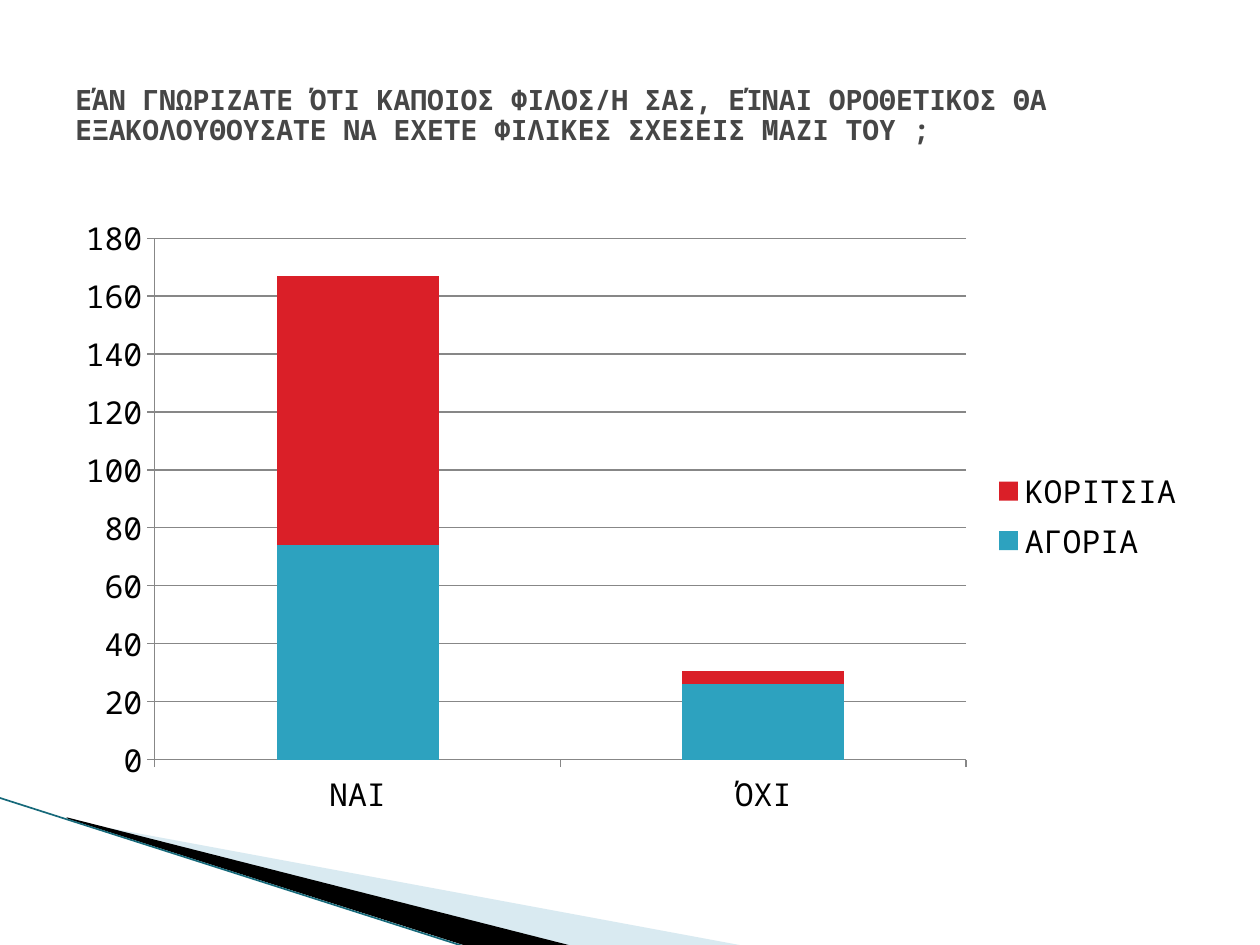
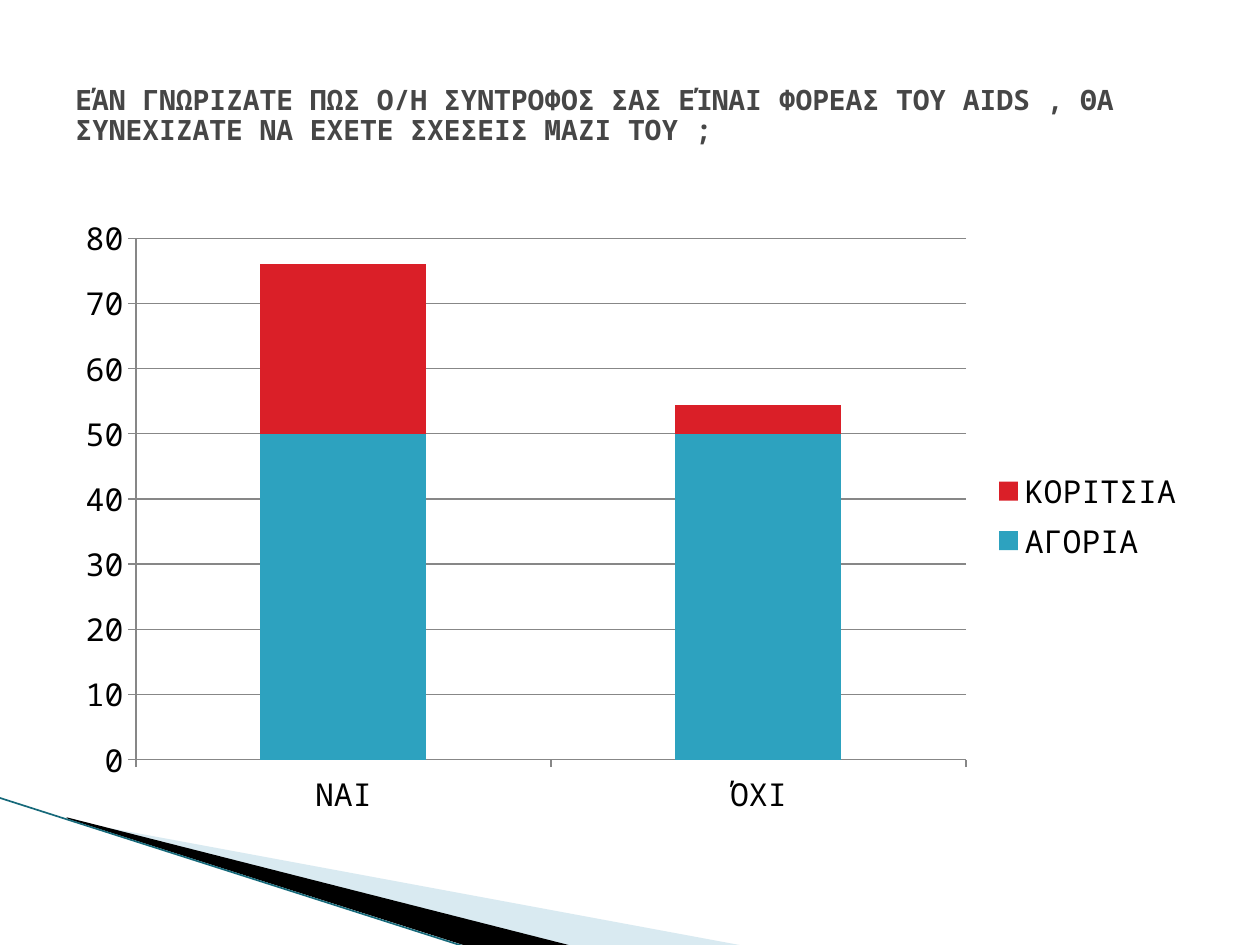
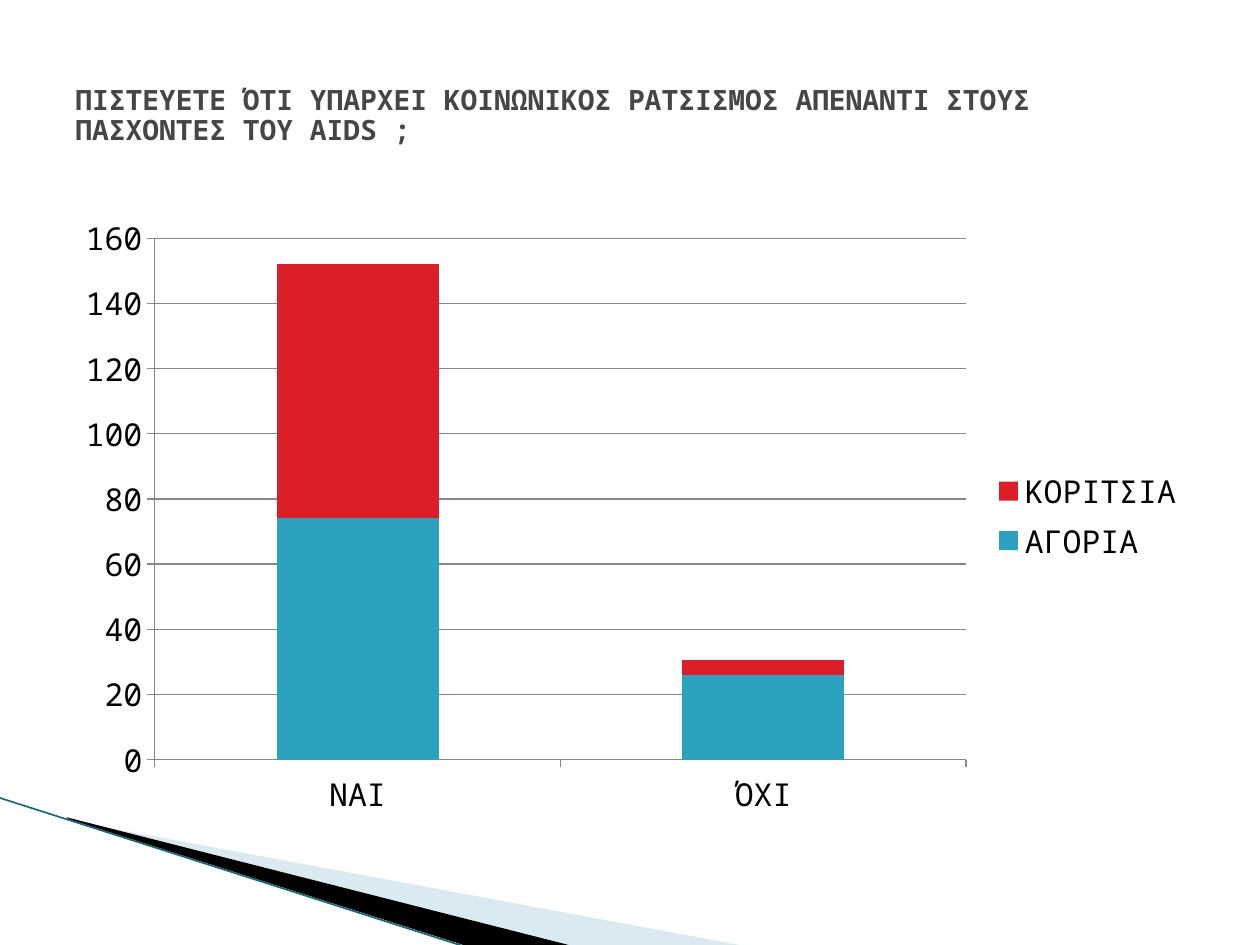
"""Builds three survey slides, each with a question and a stacked column chart."""
import pptx
import pptx.util
import pptx.chart.data
import pptx.dml.color
import pptx.enum.chart
import pptx.enum.shapes
import pptx.enum.text
import pptx.oxml.ns
import pptx.oxml.xmlchemy
from pptx.util import Pt

FONT = "Noto Sans Mono"
TITLE_FORMAT = {"name": FONT, "size": Pt(16), "bold": True}
CHART_FORMAT = {"name": FONT, "size": Pt(18), "bold": False}
TITLE_COLOR, TEXT_COLOR, GRID_COLOR = "464646", "000000", "878787"
SERIES_COLORS = ("2DA2BF", "DA1F28")
EDGE_COLOR = "16697A"

TITLE_BOX = (36, 21.6, 648, 90)
CHART_BOX = (36, 116.64, 648, 356.4)
CORNER_BOX = (0, 456, 428.4, 84.72)
WEDGES = (
    ("A0CBDC", 40, ((39.6, 12.72), (428.4, 84.72), (328.32, 84.72), (39.6, 12))),
    ("000000", 100, ((38.16, 11.28), (329.04, 84.72), (267.84, 85.44), (38.88, 12))),
)
EDGE = ((-0.72, -0.24), (267.12, 85.44))

CATEGORIES = ("ΝΑΙ", "ΌΧΙ")
QUESTIONS = (
    ("ΕΆΝ ΓΝΩΡΙΖΑΤΕ ΌΤΙ ΚΑΠΟΙΟΣ ΦΙΛΟΣ/Η ΣΑΣ, ΕΊΝΑΙ ΟΡΟΘΕΤΙΚΟΣ ΘΑ "
     "ΕΞΑΚΟΛΟΥΘΟΥΣΑΤΕ ΝΑ ΕΧΕΤΕ ΦΙΛΙΚΕΣ ΣΧΕΣΕΙΣ ΜΑΖΙ ΤΟΥ ;",
     {"ΑΓΟΡΙΑ": (74, 26), "ΚΟΡΙΤΣΙΑ": (93, 4.4)}),
    ("ΕΆΝ ΓΝΩΡΙΖΑΤΕ ΠΩΣ Ο/Η ΣΥΝΤΡΟΦΟΣ ΣΑΣ ΕΊΝΑΙ ΦΟΡΕΑΣ ΤΟΥ AIDS , ΘΑ "
     "ΣΥΝΕΧΙΖΑΤΕ ΝΑ ΕΧΕΤΕ ΣΧΕΣΕΙΣ ΜΑΖΙ ΤΟΥ ;",
     {"ΑΓΟΡΙΑ": (50, 50), "ΚΟΡΙΤΣΙΑ": (26, 4.4)}),
    ("ΠΙΣΤΕΥΕΤΕ ΌΤΙ ΥΠΑΡΧΕΙ ΚΟΙΝΩΝΙΚΟΣ ΡΑΤΣΙΣΜΟΣ ΑΠΕΝΑΝΤΙ ΣΤΟΥΣ "
     "ΠΑΣΧΟΝΤΕΣ ΤΟΥ AIDS ;",
     {"AΓΟΡΙΑ": (74, 26), "ΚΟΡΙΤΣΙΑ": (78, 4.4)}),
)


def rgb(value):
    """Return the colour for a hex string."""
    return pptx.dml.color.RGBColor.from_string(value)


def apply(target, values):
    """Set each attribute of the target from a dict."""
    for name, value in values.items():
        setattr(target, name, value)


def paint(fill, color, opacity=100):
    """Give a fill a solid colour with an opacity in percent."""
    fill.solid()
    fill.fore_color.rgb = rgb(color)
    if opacity < 100:
        node = fill._xPr.find(".//" + pptx.oxml.ns.qn("a:srgbClr"))
        alpha = pptx.oxml.xmlchemy.OxmlElement("a:alpha")
        alpha.set("val", str(opacity * 1000))
        node.append(alpha)


def add_corner(page, box):
    """Draw the wedges and the edge line at the bottom left."""
    left, top = box[:2]
    for color, opacity, corners in WEDGES:
        points = [(left + x, top + y) for x, y in corners]
        builder = page.shapes.build_freeform(*points[0], scale=float(Pt(1)))
        builder.add_line_segments(points[1:], close=True)
        wedge = builder.convert_to_shape()
        wedge.shadow.inherit = False
        wedge.line.fill.background()
        paint(wedge.fill, color, opacity)
    ends = [Pt(value) for x, y in EDGE for value in (left + x, top + y)]
    edge = page.shapes.add_connector(pptx.enum.shapes.MSO_CONNECTOR.STRAIGHT, *ends)
    edge.line.width = Pt(0.95)
    edge.line.color.rgb = rgb(EDGE_COLOR)
    edge._element.spPr.append(pptx.oxml.xmlchemy.OxmlElement("a:effectLst"))


def add_title(page, box, text):
    """Write the question in the title box."""
    frame = page.shapes.add_textbox(*map(Pt, box)).text_frame
    apply(frame, {"word_wrap": True,
                  "vertical_anchor": pptx.enum.text.MSO_ANCHOR.MIDDLE})
    para = frame.paragraphs[0]
    para.line_spacing = 0.9
    span = para.add_run()
    span.text = text
    apply(span.font, TITLE_FORMAT)
    span.font.color.rgb = rgb(TITLE_COLOR)


def add_answers(page, box, answers):
    """Add the stacked column chart of the answers."""
    data = pptx.chart.data.CategoryChartData()
    data.categories = CATEGORIES
    for name, values in answers.items():
        data.add_series(name, values)
    kind = pptx.enum.chart.XL_CHART_TYPE.COLUMN_STACKED
    chart = page.shapes.add_chart(kind, *map(Pt, box), data).chart
    apply(chart, {"has_title": False, "has_legend": True})
    apply(chart.font, CHART_FORMAT)
    chart.font.color.rgb = rgb(TEXT_COLOR)
    apply(chart.legend, {"position": pptx.enum.chart.XL_LEGEND_POSITION.RIGHT,
                         "include_in_layout": False})
    plot = chart.plots[0]
    apply(plot, {"gap_width": 150, "overlap": 100, "vary_by_categories": False})
    for series, color in zip(plot.series, SERIES_COLORS):
        paint(series.format.fill, color)
    chart.value_axis.has_major_gridlines = True
    lines = [chart.value_axis.major_gridlines.format.line]
    for axis in (chart.category_axis, chart.value_axis):
        axis.major_tick_mark = pptx.enum.chart.XL_TICK_MARK.OUTSIDE
        lines.append(axis.format.line)
    for line in lines:
        line.width = Pt(0.75)
        line.color.rgb = rgb(GRID_COLOR)


def add_question_page(deck, text, answers):
    """Add one page with its corner, chart and title."""
    page = deck.slides.add_slide(deck.slide_layouts[6])
    add_corner(page, CORNER_BOX)
    add_answers(page, CHART_BOX, answers)
    add_title(page, TITLE_BOX, text)


def main():
    """Build and save the deck."""
    deck = pptx.Presentation()
    apply(deck, {"slide_width": Pt(720), "slide_height": Pt(540)})
    for text, answers in QUESTIONS:
        add_question_page(deck, text, answers)
    deck.save("out.pptx")


if __name__ == "__main__":
    main()
